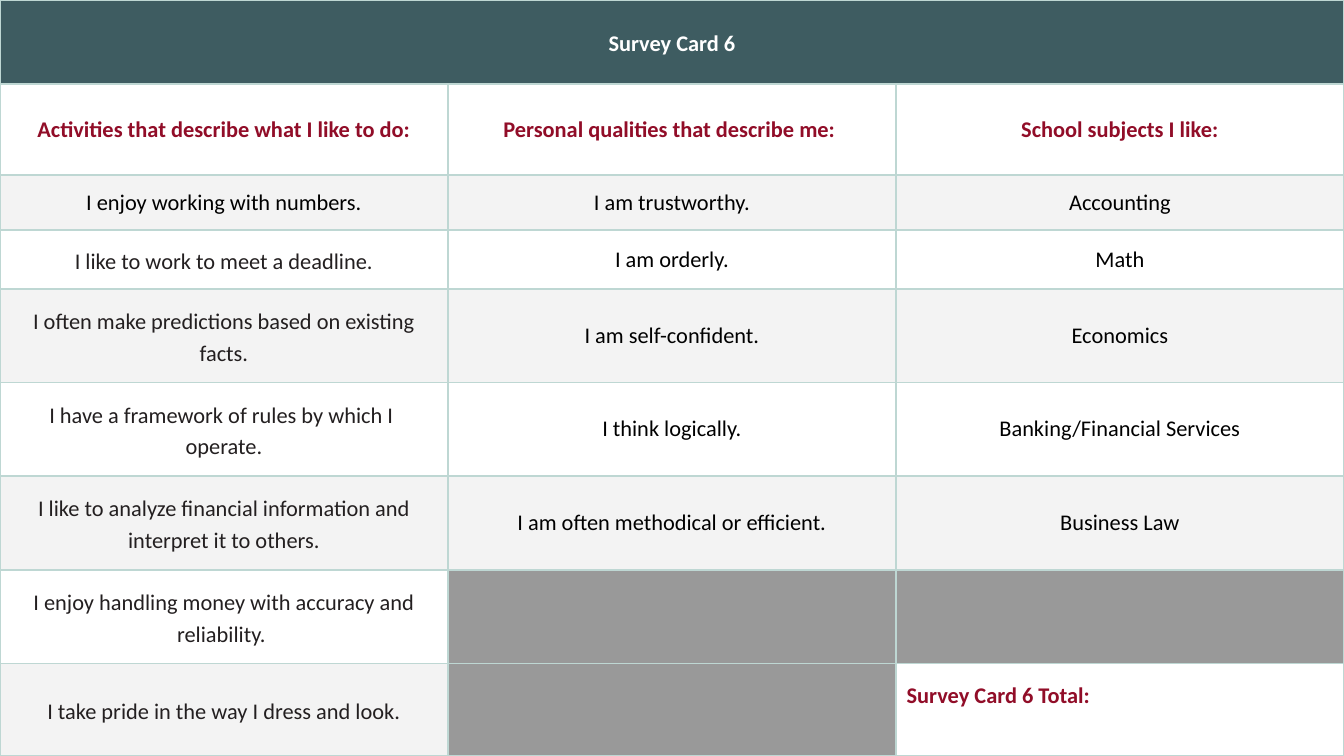
import pptx
import pptx.dml.color
import pptx.enum.text
import pptx.oxml
import pptx.oxml.ns
import pptx.util

Inches = pptx.util.Inches
Pt = pptx.util.Pt
RGBColor = pptx.dml.color.RGBColor
Align = pptx.enum.text.PP_ALIGN
Anchor = pptx.enum.text.MSO_ANCHOR

TEAL = RGBColor(0x3E, 0x5C, 0x61)
MINT = RGBColor(0xBE, 0xD7, 0xD3)
CRIMSON = RGBColor(0x91, 0x0D, 0x28)
INK = RGBColor(0x23, 0x1F, 0x20)
BLACK = RGBColor(0, 0, 0)
WHITE = RGBColor(0xFF, 0xFF, 0xFF)
PALE = RGBColor(0xF3, 0xF3, 0xF3)
GRAY = RGBColor(0x99, 0x99, 0x99)

PAGE_WIDTH = Inches(10)
PAGE_HEIGHT = PAGE_WIDTH * 9 // 16
ROW_SHARES = [0.63, 0.68, 0.41, 0.44, 0.7, 0.7, 0.7, 0.7, 0.69]
HEADINGS = [
    "Activities that describe what I like to do:",
    "Personal qualities that describe me: ",
    "School subjects I like:",
]
ANSWERS = [
    ("I enjoy working with numbers.", "I am trustworthy.", "Accounting"),
    ("I like to work to meet a deadline.", "I am orderly.", "Math"),
    ("I often make predictions based on existing facts.", "I am self-confident.", "Economics"),
    ("I have a framework of rules by which I \noperate.", "I think logically.",
     "Banking/Financial Services"),
    ("I like to analyze financial information and interpret it to others.",
     "I am often methodical or efficient.", "Business Law"),
    ("I enjoy handling money with accuracy and reliability. ", "", ""),
    ("I take pride in the way I dress and look.", "", ""),
]


def write_text(frame, text, color=BLACK, bold=False, align=Align.CENTER,
               spacing=None, before=None, after=None):
    for index, line in enumerate(text.split("\n")):
        para = frame.paragraphs[0] if index == 0 else frame.add_paragraph()
        para.alignment = align
        para.line_spacing = spacing
        para.space_before = before
        para.space_after = after
        span = para.add_run()
        span.text = line
        span.font.name = "Calibri"
        span.font.size = Pt(12)
        span.font.bold = bold
        span.font.color.rgb = color


class SurveyCard:
    def __init__(self, deck):
        self.page = deck.slides.add_slide(deck.slide_layouts[6])
        self.border = MINT
        self.margin = Inches(0.08)

    def table(self, shares, columns, width, height):
        frame = self.page.shapes.add_table(len(shares), columns, 0, 0, width, height)
        for row, share in zip(frame.table.rows, shares):
            row.height = int(height * share / sum(shares))
        return frame.table

    def cell(self, cell, fill, text="", anchor=Anchor.MIDDLE, top=None, **style):
        properties = cell._tc.get_or_add_tcPr()
        for side in "LRTB":
            properties.append(pptx.oxml.parse_xml(
                f'<a:ln{side} {pptx.oxml.ns.nsdecls("a")} w="{Pt(1)}">'
                f'<a:solidFill><a:srgbClr val="{self.border}"/></a:solidFill></a:ln{side}>'))
        cell.fill.solid()
        cell.fill.fore_color.rgb = fill
        cell.vertical_anchor = anchor
        cell.margin_left = cell.margin_right = cell.margin_bottom = self.margin
        cell.margin_top = self.margin if top is None else top
        if text:
            write_text(cell.text_frame, text, **style)


def main():
    deck = pptx.Presentation()
    deck.slide_width = PAGE_WIDTH
    deck.slide_height = PAGE_HEIGHT
    card = SurveyCard(deck)
    table = card.table(ROW_SHARES, len(HEADINGS), PAGE_WIDTH, PAGE_HEIGHT)

    table.cell(0, 0).merge(table.cell(0, 2))
    card.cell(table.cell(0, 0), TEAL, "Survey Card 6", color=WHITE, bold=True,
              spacing=1.15, after=Pt(6))
    for column, heading in enumerate(HEADINGS):
        card.cell(table.cell(1, column), WHITE, heading, color=CRIMSON, bold=True, before=Pt(10))

    last = len(ROW_SHARES) - 1
    for row, answers in enumerate(ANSWERS, start=2):
        band = WHITE if row % 2 else PALE
        for column, answer in enumerate(answers):
            cell = table.cell(row, column)
            if (row, column) == (last, 2):
                card.cell(cell, WHITE, "Survey Card 6 Total:", anchor=Anchor.TOP,
                          top=Inches(0.14), color=CRIMSON, bold=True, align=Align.LEFT)
            elif not answer:
                card.cell(cell, GRAY)
            elif column == 0 and row > 2:
                card.cell(cell, band, answer, color=INK, spacing=1.15)
            else:
                card.cell(cell, band, answer)

    deck.save("out.pptx")


if __name__ == "__main__":
    main()
